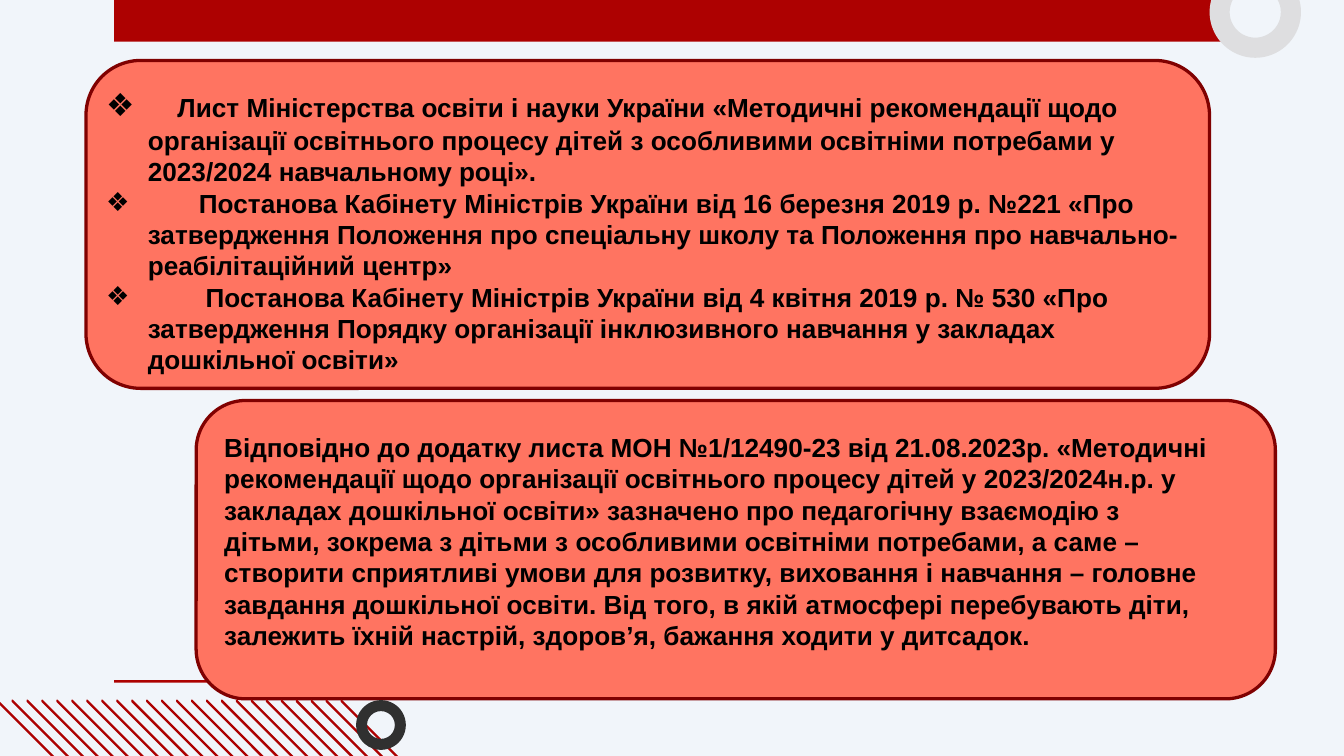
from lxml import etree
from pptx import Presentation
from pptx.dml.color import RGBColor
from pptx.enum.shapes import MSO_SHAPE
from pptx.enum.text import MSO_ANCHOR, MSO_AUTO_SIZE, PP_ALIGN
from pptx.oxml.ns import qn
from pptx.util import Inches, Pt

RECTANGLE = MSO_SHAPE.RECTANGLE
ROUNDED = MSO_SHAPE.ROUNDED_RECTANGLE
DONUT = MSO_SHAPE.DONUT
TOP = MSO_ANCHOR.TOP
NO_RESIZE = MSO_AUTO_SIZE.NONE
LEFT = PP_ALIGN.LEFT

BACKGROUND = RGBColor(0xF1, 0xF5, 0xFA)
RED = RGBColor(0xAD, 0x01, 0x01)
CORAL = RGBColor(0xFF, 0x74, 0x61)
MAROON = RGBColor(0x80, 0x01, 0x01)
CHARCOAL = RGBColor(0x30, 0x30, 0x30)
SILVER = RGBColor(0xDE, 0xDE, 0xE0)
BLACK = RGBColor(0, 0, 0)

DOCUMENTS = [
    ("Лист Міністерства освіти і науки України «Методичні рекомендації щодо організації освітнього процесу дітей з особливими освітніми потребами у 2023/2024 навчальному році».", 0.53, 17, "Arial Narrow"),
    ("Постанова Кабінету Міністрів України від 16 березня 2019 р. №221 «Про затвердження Положення про спеціальну школу та Положення про навчально-реабілітаційний центр»", 0.69, 14, "Arial"),
    ("Постанова Кабінету Міністрів України від 4 квітня 2019 р. № 530 «Про затвердження Порядку організації інклюзивного навчання у закладах дошкільної освіти»", 0.74, 14, "Arial"),
]
EXPLANATION = "Відповідно до додатку листа МОН №1/12490-23 від 21.08.2023р. «Методичні рекомендації щодо організації освітнього процесу дітей у 2023/2024н.р. у закладах дошкільної освіти» зазначено про педагогічну взаємодію з дітьми, зокрема з дітьми з особливими освітніми потребами, а саме – створити сприятливі умови для розвитку, виховання і навчання – головне завдання дошкільної освіти. Від того, в якій атмосфері перебувають діти, залежить їхній настрій, здоров’я, бажання ходити у дитсадок."

BARS = [(0.85, 0, 8.25, 0.31), (0.85, 5.06, 8.25, 0.02)]
PANELS = [(0.64, 0.45, 8.36, 2.44), (1.46, 2.98, 8.03, 2.22)]
RINGS = [((2.65, 5.21, 0.37, 0.37), CHARCOAL), ((9, -0.25, 0.68, 0.68), SILVER)]
BODY_PLACE = (0.69, 0.54, 8.38, 2.34)
EXPLANATION_PLACE = (1.57, 3.16, 7.53, 1.75)
BULLET_INDENT = 0.31

STRIPE_COUNT = 24
STRIPE_LEFT, STRIPE_RIGHT, STRIPE_TOP = -0.02, 2.54, 5.21
STRIPE_STEP = (STRIPE_RIGHT - STRIPE_LEFT) / (STRIPE_COUNT - 1)
STRIPE_SPAN, STRIPE_WIDTH = 1.62, 0.01


def inches(place):
    return [Inches(value) for value in place]


def paint(shape, fill, line=None, width=0.75):
    shape.shadow.inherit = False
    shape.fill.solid()
    shape.fill.fore_color.rgb = fill
    if line is None:
        shape.line.fill.background()
    else:
        shape.line.color.rgb = line
        shape.line.width = Pt(width)


def add_shape(page, kind, place, fill, line=None, width=0.75):
    shape = page.shapes.add_shape(kind, *inches(place))
    paint(shape, fill, line, width)
    return shape


def add_stripe(page, left):
    right, bottom = left + STRIPE_SPAN, STRIPE_TOP + STRIPE_SPAN
    corners = [
        (right, bottom),
        (right - STRIPE_WIDTH, bottom),
        (left, STRIPE_TOP + STRIPE_WIDTH),
    ]
    outline = page.shapes.build_freeform(Inches(left), Inches(STRIPE_TOP))
    outline.add_line_segments([inches(corner) for corner in corners], close=True)
    paint(outline.convert_to_shape(), RED, RED)


def write(para, text, size=14, font="Arial", bold=True):
    para.alignment = LEFT
    para.line_spacing = 1.0
    para.space_before = para.space_after = Pt(0)
    span = para.add_run()
    span.text = text
    span.font.size = Pt(size)
    span.font.name = font
    span.font.bold = bold
    span.font.color.rgb = BLACK


def add_bullet(para, text_start):
    properties = para._p.get_or_add_pPr()
    properties.set("marL", str(Inches(BULLET_INDENT)))
    properties.set("indent", str(-Inches(BULLET_INDENT)))
    color = etree.SubElement(properties, qn("a:buClr"))
    etree.SubElement(color, qn("a:srgbClr"), val=str(BLACK))
    etree.SubElement(properties, qn("a:buFont"), typeface="Arial")
    etree.SubElement(properties, qn("a:buChar"), char="❖")
    stops = etree.SubElement(properties, qn("a:tabLst"))
    etree.SubElement(stops, qn("a:tab"), pos=str(Inches(text_start)), algn="l")


def prepare_frame(box, inset):
    frame = box.text_frame
    frame.word_wrap = True
    frame.auto_size = NO_RESIZE
    frame.vertical_anchor = TOP
    frame.margin_left = frame.margin_right = Inches(0.1)
    frame.margin_top = frame.margin_bottom = Inches(inset)
    return frame


def main():
    deck = Presentation()
    deck.slide_width = Inches(10)
    deck.slide_height = deck.slide_width * 9 // 16
    page = deck.slides.add_slide(deck.slide_layouts[1])
    page.background.fill.solid()
    page.background.fill.fore_color.rgb = BACKGROUND
    title, body = page.placeholders
    title.element.getparent().remove(title.element)

    for place in BARS:
        add_shape(page, RECTANGLE, place, RED)
    for place in PANELS:
        panel = add_shape(page, ROUNDED, place, CORAL, MAROON, 1.75)

    panel.element.addnext(body.element)
    body.left, body.top, body.width, body.height = inches(BODY_PLACE)
    frame = prepare_frame(body, 0.1)
    for index, (text, start, lead_size, lead_font) in enumerate(DOCUMENTS):
        para = frame.add_paragraph() if index else frame.paragraphs[0]
        write(para, "\t", size=lead_size, font=lead_font, bold=False)
        write(para, text)
        add_bullet(para, start)

    for index in range(STRIPE_COUNT):
        add_stripe(page, STRIPE_RIGHT - index * STRIPE_STEP)
    for place, color in RINGS:
        ring = add_shape(page, DONUT, place, color)
        ring.adjustments[0] = 0.22

    box = page.shapes.add_textbox(*inches(EXPLANATION_PLACE))
    write(prepare_frame(box, 0.05).paragraphs[0], EXPLANATION)

    deck.save("out.pptx")


if __name__ == "__main__":
    main()
